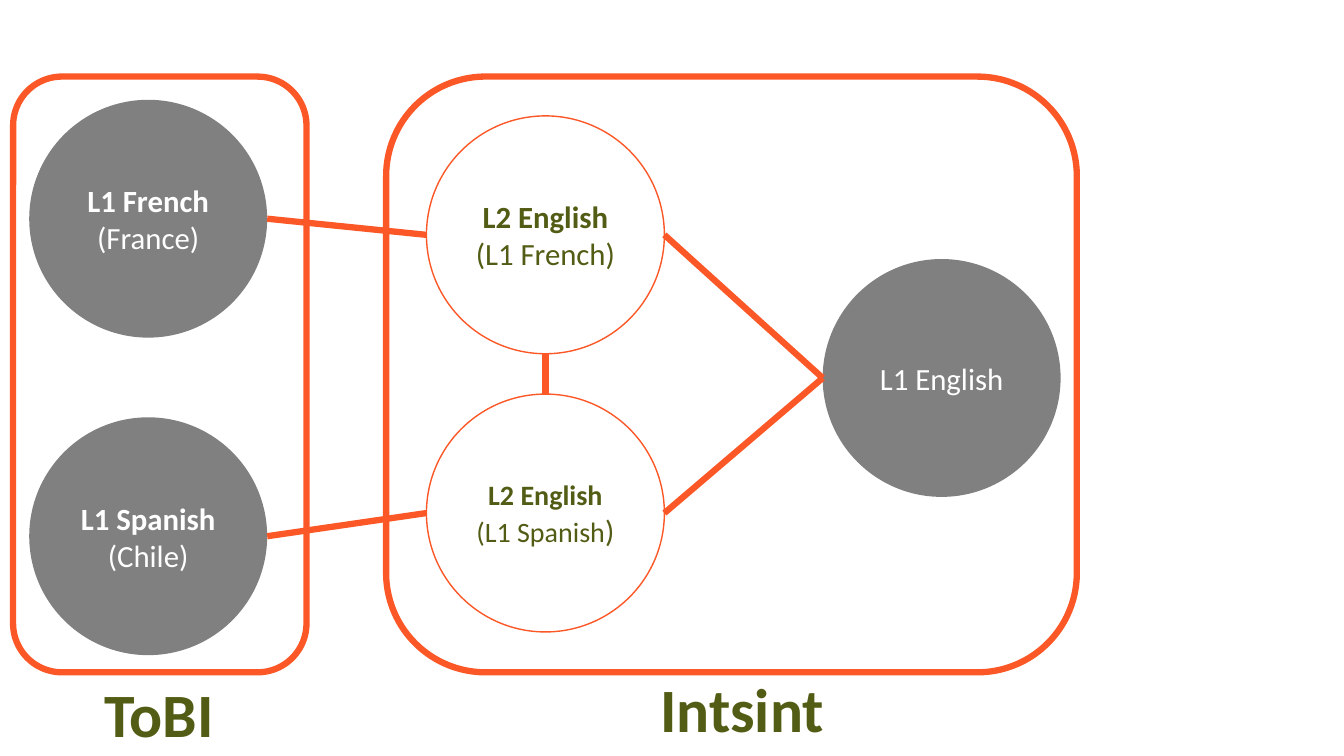
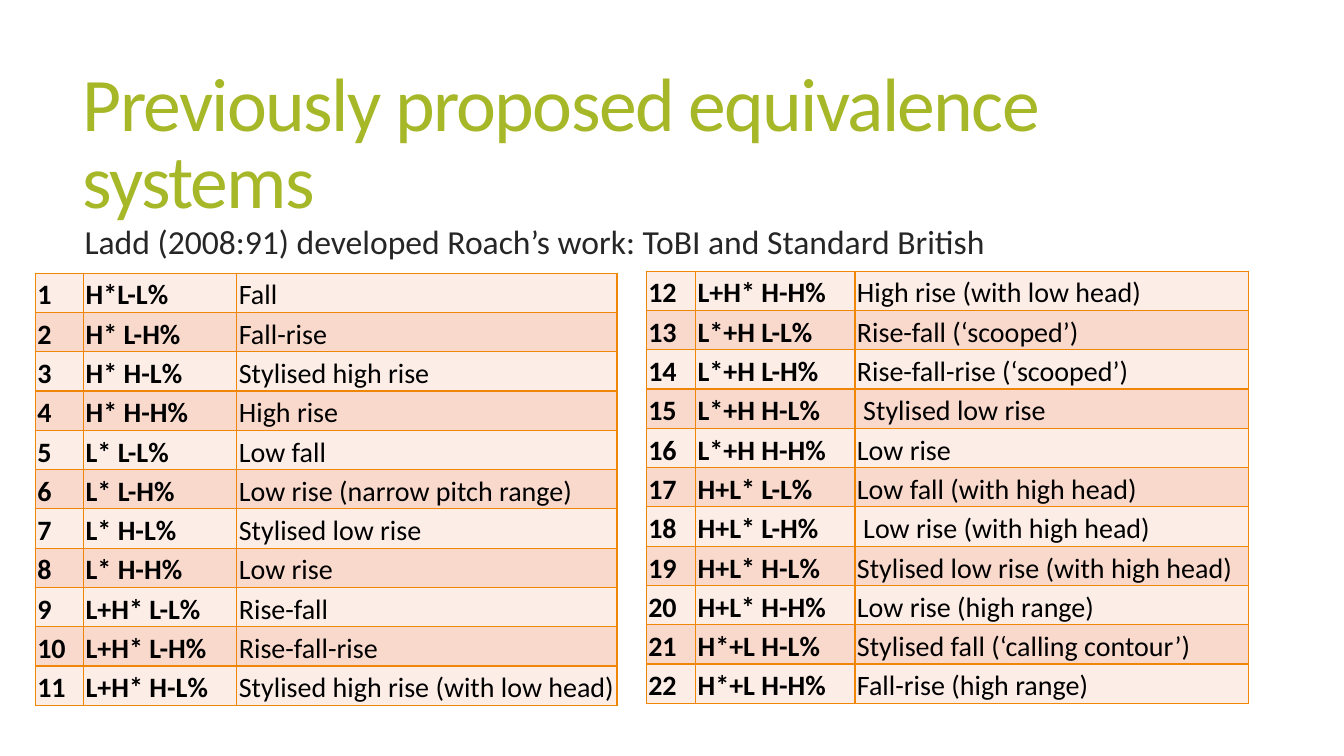
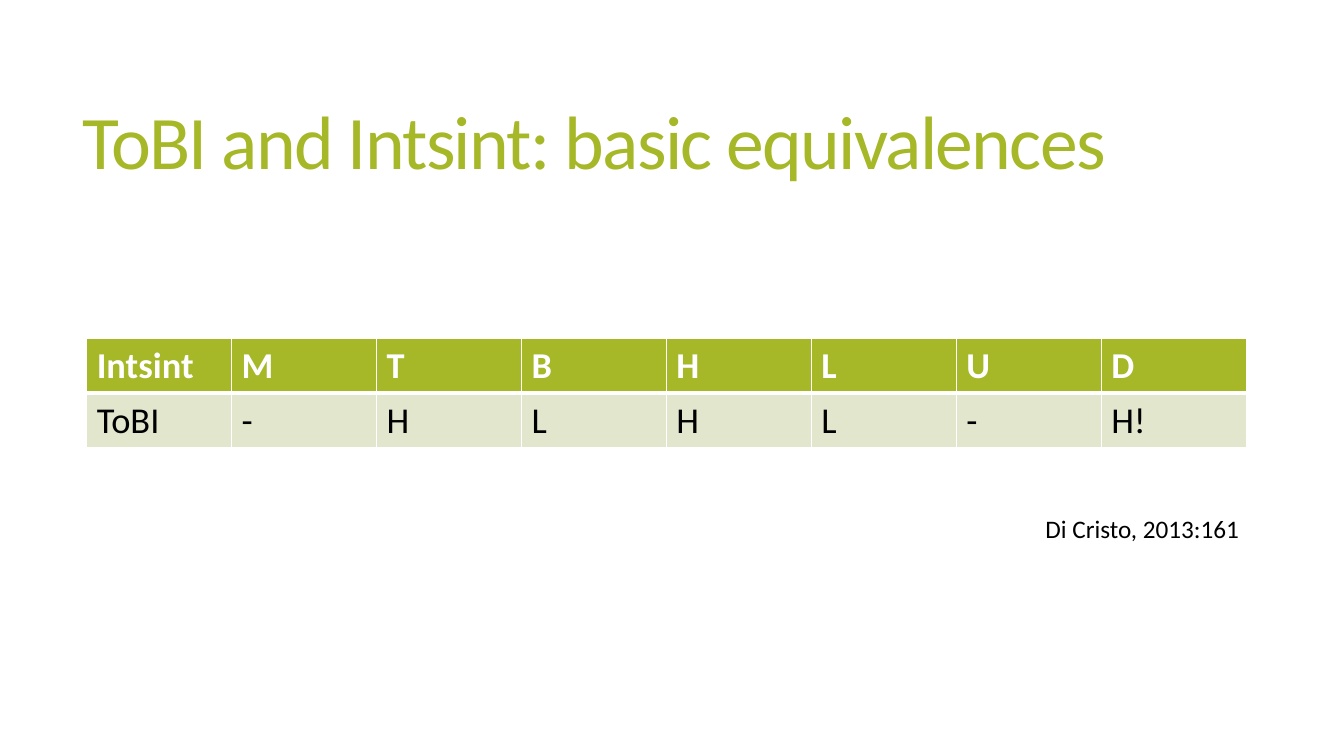
from lxml.etree import SubElement
from pptx import Presentation
from pptx.dml.color import RGBColor
from pptx.enum.shapes import MSO_CONNECTOR as Link, MSO_SHAPE as Shape
from pptx.enum.text import MSO_ANCHOR as Anchor, MSO_AUTO_SIZE as Fit, PP_ALIGN as Align
from pptx.oxml.ns import qn
from pptx.util import Inches, Pt

FONT = "Calibri"
ORANGE, AMBER, GREY = "FC5827", "EF8606", "808080"
LIME, OLIVE, SAGE = "A6B727", "535C14", "E1E6CD"
PALE, PEACH = "FCEDE7", "F9D9CC"
WHITE, BLACK, INK = "FFFFFF", "000000", "262626"
DIAM = 2.36

FALLS = [
    ("1", "H*L-L%", "Fall"),
    ("2", "H* L-H%", "Fall-rise"),
    ("3", "H* H-L%", "Stylised high rise"),
    ("4", "H* H-H%", "High rise"),
    ("5", "L* L-L%", "Low fall"),
    ("6", "L* L-H%", "Low rise (narrow pitch range)"),
    ("7", "L* H-L%", "Stylised low rise"),
    ("8", "L* H-H%", "Low rise"),
    ("9", "L+H* L-L%", "Rise-fall"),
    ("10", "L+H* L-H%", "Rise-fall-rise"),
    ("11", "L+H* H-L%", "Stylised high rise (with low head)"),
]
RISES = [
    ("12", "L+H* H-H%", "High rise (with low head)"),
    ("13", "L*+H L-L%", "Rise-fall (‘scooped’)"),
    ("14", "L*+H L-H%", "Rise-fall-rise (‘scooped’)"),
    ("15", "L*+H H-L%", " Stylised low rise"),
    ("16", "L*+H H-H%", "Low rise"),
    ("17", "H+L* L-L%", "Low fall (with high head)"),
    ("18", "H+L* L-H%", " Low rise (with high head)"),
    ("19", "H+L* H-L%", "Stylised low rise (with high head)"),
    ("20", "H+L* H-H%", "Low rise (high range)"),
    ("21", "H*+L H-L%", "Stylised fall (‘calling contour’)"),
    ("22", "H*+L H-H%", "Fall-rise (high range)"),
]
TONES = [
    ("Intsint", "M", "T", "B", "H", "L", "U", "D"),
    ("ToBI", "-", "H", "L", "H", "L", "-", "H!"),
]


def paint(target, color):
    """Give a fill or a font colour format a hex colour."""
    target.rgb = RGBColor.from_string(color)


def style(run, size, color, bold=False):
    font = run.font
    font.name, font.size, font.bold = FONT, Pt(size), bold
    paint(font.color, color)


def fill(item, color):
    if color:
        item.fill.solid()
        paint(item.fill.fore_color, color)
    else:
        item.fill.background()


def stroke(line, color, width):
    paint(line.color, color)
    line.width = Pt(width)


def add_title(slide, text):
    title = slide.shapes.title
    title.left, title.top = Inches(0.72), Inches(0.55)
    title.width, title.height = Inches(11.78), Inches(1.81)
    frame = title.text_frame
    frame.text = text
    frame.auto_size, frame.vertical_anchor = Fit.NONE, Anchor.MIDDLE
    para = frame.paragraphs[0]
    para.alignment, para.line_spacing = Align.LEFT, 0.85
    run = para.runs[0]
    style(run, 54, LIME)
    run.font._element.set("spc", "-120")


def add_label(slide, text, box, size, color, bold=False, wrap=False):
    label = slide.shapes.add_textbox(*map(Inches, box))
    frame = label.text_frame
    frame.text, frame.word_wrap = text, wrap
    style(frame.paragraphs[0].runs[0], size, color, bold)
    return frame.paragraphs[0]


def add_frame(slide, *box):
    """Draw a rounded outline around a group of circles."""
    frame = slide.shapes.add_shape(Shape.ROUNDED_RECTANGLE, *map(Inches, box))
    frame.shadow.inherit = False
    fill(frame, None)
    stroke(frame.line, ORANGE, 4.5)


def add_circle(slide, left, top, head, note="", solid=False, size=22):
    box = map(Inches, (left, top, DIAM, DIAM))
    circle = slide.shapes.add_shape(Shape.OVAL, *box)
    circle.shadow.inherit = False
    fill(circle, GREY if solid else None)
    if solid:
        circle.line.fill.background()
    else:
        stroke(circle.line, ORANGE, 1)
    frame = circle.text_frame
    frame.text = f"{head}\n{note}" if note else head
    frame.vertical_anchor = Anchor.MIDDLE
    for i, para in enumerate(frame.paragraphs):
        para.alignment = Align.CENTER
        bold = bool(note) and i == 0
        style(para.runs[0], size, WHITE if solid else OLIVE, bold)
    return circle


def spot(circle, across, down):
    """Return a point of the circle, given as shares of its box."""
    return (circle.left + int(circle.width * across),
            circle.top + int(circle.height * down))


def join(slide, start, end, upright=False):
    """Link two circles, side to side or bottom to top."""
    first, last = ((0.5, 1), (0.5, 0)) if upright else ((1, 0.5), (0, 0.5))
    link = slide.shapes.add_connector(
        Link.STRAIGHT, *spot(start, *first), *spot(end, *last))
    stroke(link.line, ORANGE, 4.5)
    SubElement(link._element.spPr, qn("a:effectLst"))


def edge(cell, color, **widths):
    """Set cell borders; widths are in points, keyed L, R, T, B."""
    props = cell._tc.get_or_add_tcPr()
    for side, width in widths.items():
        line = SubElement(props, qn(f"a:ln{side}"), w=str(Pt(width)))
        solid = SubElement(line, qn("a:solidFill"))
        SubElement(solid, qn("a:srgbClr"), val=color)


def add_grid(slide, rows, left, top, cols, height):
    """Add a table of the given sizes and return it."""
    shape = slide.shapes.add_table(
        len(rows), len(cols), Inches(left), Inches(top),
        Inches(sum(cols)), Inches(height * len(rows)))
    grid = shape.table
    grid.first_row = grid.horz_banding = False
    for col, width in zip(grid.columns, cols):
        col.width = Inches(width)
    for i, row in enumerate(rows):
        grid.rows[i].height = Inches(height)
        for j, text in enumerate(row):
            grid.cell(i, j).text_frame.text = text
    return grid


def add_tunes(slide, rows, left, top, cols):
    grid = add_grid(slide, rows, left, top, cols, 0.39)
    for i, row in enumerate(grid.rows):
        for j, cell in enumerate(row.cells):
            cell.margin_left = cell.margin_right = Inches(0.02)
            cell.margin_top = cell.margin_bottom = 0
            para = cell.text_frame.paragraphs[0]
            para.line_spacing = 1.15
            style(para.runs[0], 20, BLACK, j < 2)
            edge(cell, AMBER, L=1, R=1, T=1, B=1)
            fill(cell, PEACH if i % 2 else PALE)


def add_tones(slide):
    grid = add_grid(slide, TONES, 0.86, 3.36, [11.5 / 8] * 8, 0.54)
    grid.first_row = True
    for i, row in enumerate(grid.rows):
        head = i == 0
        for cell in row.cells:
            run = cell.text_frame.paragraphs[0].runs[0]
            style(run, 26, WHITE if head else BLACK, head)
            edge(cell, WHITE, L=1, R=1, T=1 if head else 3, B=3 if head else 1)
            fill(cell, LIME if head else SAGE)


def draw_map(slide):
    add_frame(slide, 3.83, 0.76, 6.85, 5.91)
    add_frame(slide, 0.13, 0.76, 2.91, 5.91)
    french = add_circle(slide, 0.29, 0.99, "L1 French", "(France)", True)
    spanish = add_circle(slide, 0.29, 4.14, "L1 Spanish", "(Chile)", True)
    lower = add_circle(slide, 4.23, 3.91, "L2 English", "(L1 Spanish", size=20)
    close = lower.text_frame.paragraphs[1].add_run()
    close.text = ")"
    style(close, 22, OLIVE)
    upper = add_circle(slide, 4.23, 1.15, "L2 English", "(L1 French)")
    native = add_circle(slide, 8.16, 2.57, "L1 English", solid=True)
    join(slide, french, upper)
    join(slide, spanish, lower)
    join(slide, upper, lower, upright=True)
    join(slide, upper, native)
    join(slide, lower, native)
    add_label(slide, "Intsint", (6.45, 6.61, 1.84, 0.84), 44, OLIVE, True)
    add_label(slide, "ToBI", (0.94, 6.66, 1.3, 0.84), 44, OLIVE, True)


def main():
    deck = Presentation()
    deck.slide_width, deck.slide_height = Inches(13.33), Inches(7.5)
    titled, blank = deck.slide_layouts[5], deck.slide_layouts[6]

    draw_map(deck.slides.add_slide(blank))

    slide = deck.slides.add_slide(titled)
    add_title(slide, "Previously proposed equivalence systems")
    intro = add_label(
        slide, "Ladd (2008:91) developed Roach’s work: ToBI and Standard British",
        (0.74, 2.2, 11.76, 0.45), 24, INK, wrap=True)
    intro.line_spacing = 0.85
    add_tunes(slide, FALLS, 0.35, 2.71, (0.48, 1.52, 3.77))
    add_tunes(slide, RISES, 6.41, 2.69, (0.49, 1.58, 3.9))

    slide = deck.slides.add_slide(titled)
    add_title(slide, "ToBI and Intsint: basic equivalences")
    add_tones(slide)
    add_label(slide, "Di Cristo, 2013:161", (10.27, 5.04, 2.15, 0.4), 18, BLACK)

    deck.save("out.pptx")


if __name__ == "__main__":
    main()
